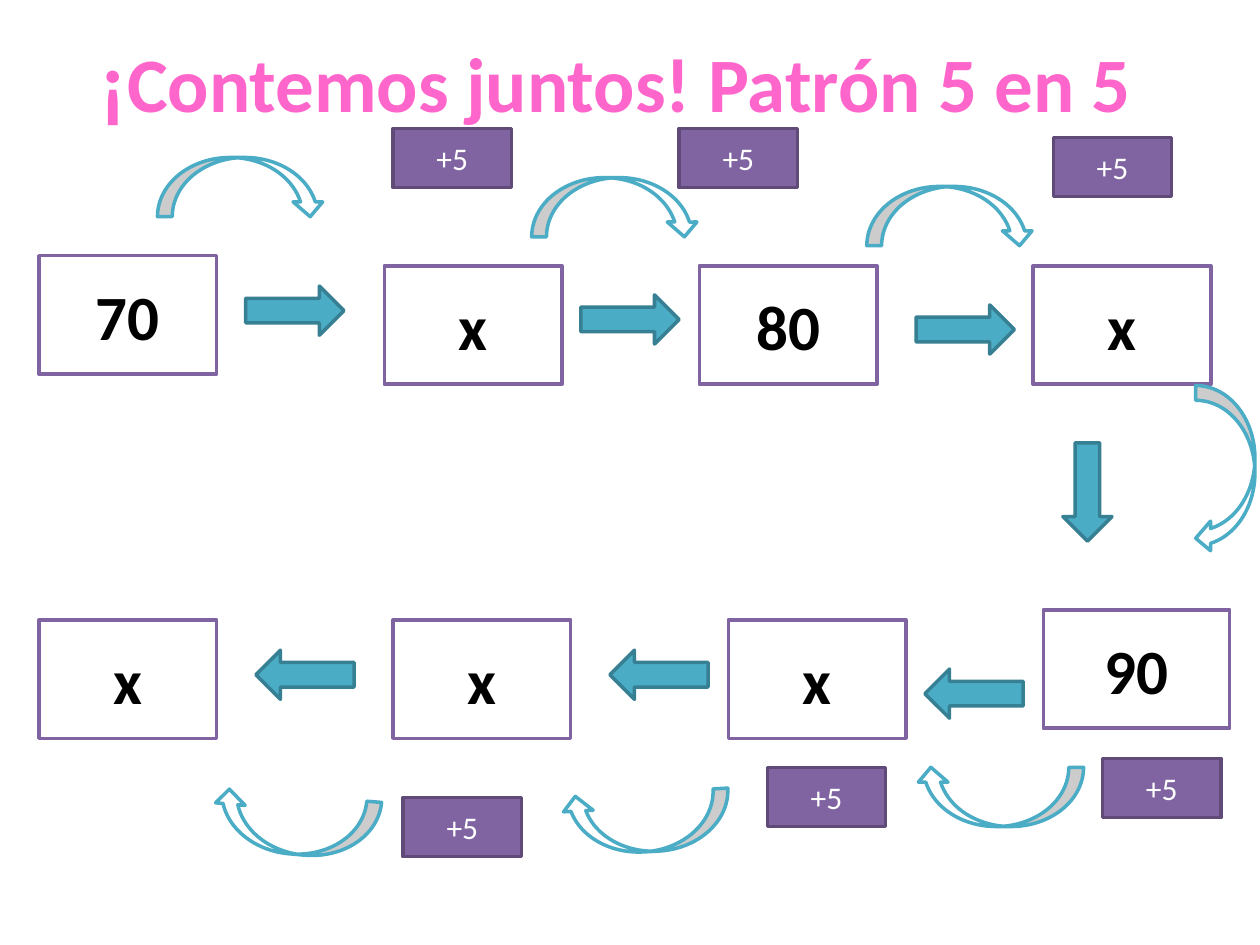
from pptx import Presentation
from pptx.dml.color import RGBColor
from pptx.enum.shapes import MSO_SHAPE
from pptx.enum.text import MSO_ANCHOR, PP_ALIGN
from pptx.util import Inches, Pt

PINK = RGBColor(0xFF, 0x66, 0xCC)
PURPLE = RGBColor(0x80, 0x64, 0xA2)
DARK_PURPLE = RGBColor(0x5F, 0x4A, 0x78)
TEAL = RGBColor(0x4B, 0xAC, 0xC6)
DARK_TEAL = RGBColor(0x37, 0x7F, 0x92)
WHITE = RGBColor(0xFF, 0xFF, 0xFF)
BLACK = RGBColor(0, 0, 0)
FONT = "Calibri"

TITLE = [("¡", 48), ("Contemos juntos! Patrón 5 en 5", 44)]

# Number boxes: text, left, top, width
NUMBERS = [
    ("70", 0.31, 2.03, 1.41), ("x", 3.05, 2.11, 1.41),
    ("80", 5.55, 2.11, 1.41), ("x", 8.2, 2.11, 1.41),
    ("90", 8.28, 4.84, 1.48), ("x", 5.78, 4.92, 1.41),
    ("x", 3.12, 4.92, 1.41), ("x", 0.31, 4.92, 1.41),
]
# Arrows: left, top, rotation
STRAIGHT_ARROWS = [
    (1.95, 2.27, 0), (4.61, 2.34, 0), (7.27, 2.42, 0), (8.24, 3.71, 90),
    (7.34, 5.31, 180), (4.84, 5.16, 180), (2.03, 5.16, 180),
]
CURVED_ARROWS = [
    (1.25, 1.25, 0), (4.22, 1.41, 0), (6.88, 1.48, 0), (9.06, 3.49, 90),
    (7.27, 6.09, 180), (4.46, 6.29, 176.9), (1.68, 6.31, 185),
]
# Step labels: left, top
STEP = "+5"
STEPS = [(3.12, 1.02), (5.39, 1.02), (8.36, 1.09),
         (8.75, 6.02), (6.09, 6.09), (3.2, 6.33)]


def style_span(span, size, color, bold):
    span.font.name = FONT
    span.font.size = Pt(size)
    span.font.color.rgb = color
    span.font.bold = bold


def add_figure(page, kind, place, fill, line, rotation=0):
    figure = page.shapes.add_shape(kind, *map(Inches, place))
    figure.shadow.inherit = False
    figure.fill.solid()
    figure.fill.fore_color.rgb = fill
    figure.line.color.rgb = line
    figure.line.width = Pt(2)
    figure.rotation = rotation
    return figure


def write_label(box, text, size, color, bold=False):
    frame = box.text_frame
    frame.text = text
    frame.word_wrap = True
    frame.vertical_anchor = MSO_ANCHOR.MIDDLE
    para = frame.paragraphs[0]
    para.alignment = PP_ALIGN.CENTER
    style_span(para.runs[0], size, color, bold)


def add_title(page):
    box = page.shapes.add_textbox(Inches(0.39), 0, Inches(9), Inches(1.25))
    frame = box.text_frame
    frame.word_wrap = True
    frame.vertical_anchor = MSO_ANCHOR.MIDDLE
    para = frame.paragraphs[0]
    para.alignment = PP_ALIGN.CENTER
    for text, size in TITLE:
        span = para.add_run()
        span.text = text
        style_span(span, size, PINK, True)


def main():
    deck = Presentation()
    deck.slide_width, deck.slide_height = Inches(10), Inches(7.5)
    page = deck.slides.add_slide(deck.slide_layouts[6])

    add_title(page)
    for text, left, top, width in NUMBERS:
        box = add_figure(page, MSO_SHAPE.RECTANGLE, (left, top, width, 0.94), WHITE, PURPLE)
        write_label(box, text, 36, BLACK, bold=True)
    for left, top, rotation in STRAIGHT_ARROWS:
        add_figure(page, MSO_SHAPE.RIGHT_ARROW, (left, top, 0.78, 0.39),
                   TEAL, DARK_TEAL, rotation)
    for left, top, rotation in CURVED_ARROWS:
        add_figure(page, MSO_SHAPE.CURVED_DOWN_ARROW, (left, top, 1.33, 0.47),
                   WHITE, TEAL, rotation)
    for left, top in STEPS:
        box = add_figure(page, MSO_SHAPE.RECTANGLE, (left, top, 0.94, 0.47),
                         PURPLE, DARK_PURPLE)
        write_label(box, STEP, 18, WHITE)

    deck.save("out.pptx")


if __name__ == "__main__":
    main()
